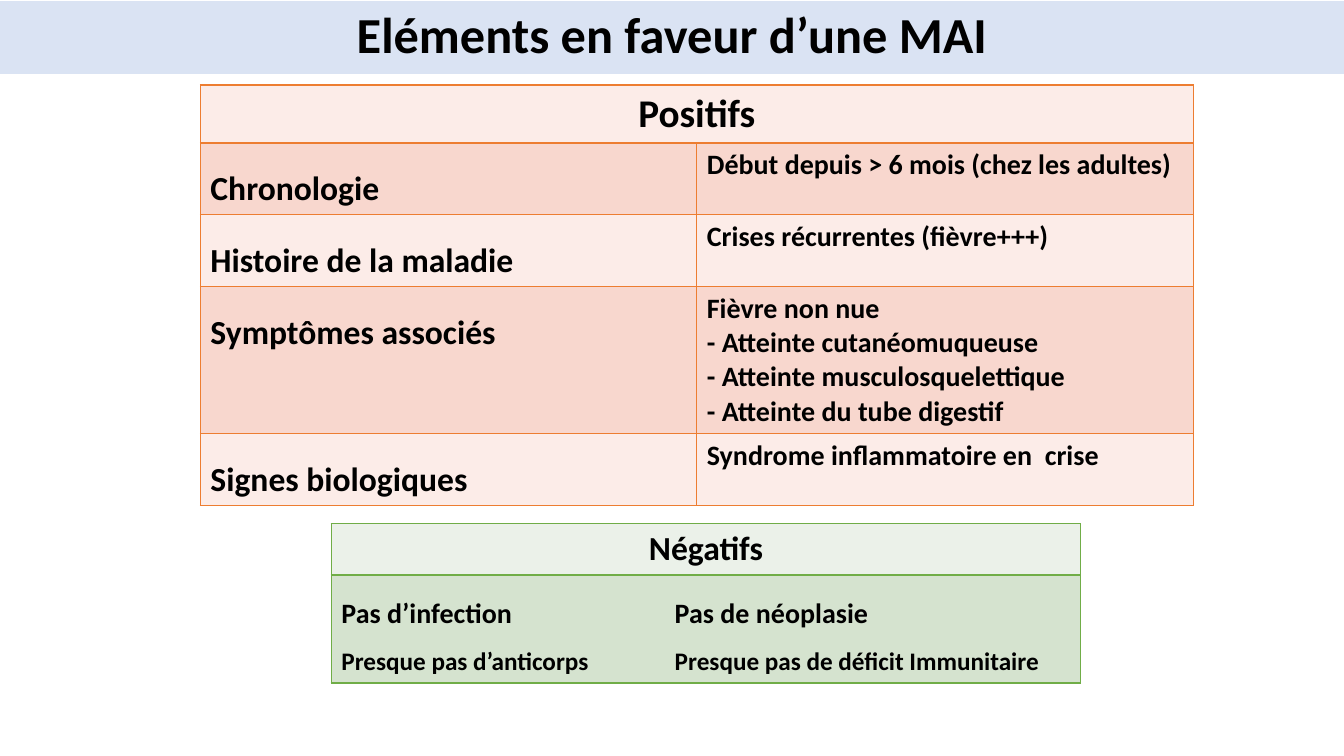
import pptx
import pptx.dml.color
import pptx.enum.text
import pptx.oxml
import pptx.oxml.ns
import pptx.util
from pptx.util import Cm

RGBColor = pptx.dml.color.RGBColor
BLACK = RGBColor(0x00, 0x00, 0x00)
TITLE_BLUE = RGBColor(0xDA, 0xE3, 0xF3)
ORANGE = RGBColor(0xED, 0x7D, 0x31)
ORANGE_BANDS = (RGBColor(0xFC, 0xEC, 0xE8), RGBColor(0xF8, 0xD7, 0xCE))
GREEN = RGBColor(0x70, 0xAD, 0x47)
GREEN_BANDS = (RGBColor(0xEB, 0xF1, 0xE9), RGBColor(0xD5, 0xE3, 0xCF))

CENTER = pptx.enum.text.PP_ALIGN.CENTER
LEFT = pptx.enum.text.PP_ALIGN.LEFT

POSITIVES = [
    ("Chronologie", ["Début depuis > 6 mois (chez les adultes)"]),
    ("Histoire de la maladie", ["Crises récurrentes (fièvre+++)"]),
    ("Symptômes associés", ["Fièvre non nue", "- Atteinte cutanéomuqueuse",
                            "- Atteinte musculosquelettique", "- Atteinte du tube digestif"]),
    ("Signes biologiques", ["Syndrome inflammatoire en  crise"]),
]
NEGATIVES = [
    ("Pas d’infection\tPas de néoplasie", 20),
    ("Presque pas d’anticorps\tPresque pas de déficit Immunitaire", 18),
]


def style_paragraph(para, text, size, align=LEFT, spacing=1.0):
    """Write bold black text into a paragraph."""
    para.text = text
    para.alignment = align
    para.line_spacing = spacing
    font = para.font
    font.name = "Calibri"
    font.size = pptx.util.Pt(size)
    font.bold = True
    font.color.rgb = BLACK


def fill_cell(cell, lines, align=LEFT, spacing=1.0):
    """Write (text, size) lines into a cell, one paragraph each."""
    frame = cell.text_frame
    for index, (text, size) in enumerate(lines):
        para = frame.add_paragraph() if index else frame.paragraphs[0]
        style_paragraph(para, text, size, align, spacing)


def add_tab_stop(para, position):
    """Put a left tab stop in a paragraph, ahead of its default font."""
    stops = pptx.oxml.parse_xml(
        f'<a:tabLst {pptx.oxml.ns.nsdecls("a")}><a:tab pos="{int(position)}" algn="l"/></a:tabLst>')
    properties = para.font._element.getparent()
    properties.insert(properties.index(para.font._element), stops)


def outline_cell(cell, color):
    """Draw a one-point border on every side of a cell."""
    properties = cell._tc.get_or_add_tcPr()
    for side in ("lnL", "lnR", "lnT", "lnB"):
        properties.append(pptx.oxml.parse_xml(
            f'<a:{side} {pptx.oxml.ns.nsdecls("a")} w="12700"><a:solidFill>'
            f'<a:srgbClr val="{color}"/></a:solidFill></a:{side}>'))


def add_banded_table(page, box, heights, columns, line_color, bands):
    """Add a table at box (left, top, width) with alternating row fills."""
    left, top, width = box
    table = page.shapes.add_table(len(heights), columns, left, top, width, sum(heights)).table
    table.first_row = False
    table.horz_banding = False
    for index, height in enumerate(heights):
        table.rows[index].height = height
        for cell in table.rows[index].cells:
            outline_cell(cell, line_color)
            cell.fill.solid()
            cell.fill.fore_color.rgb = bands[index % 2]
    return table


def add_title(page, box):
    """Place the title band in the title placeholder."""
    title = page.shapes.title
    title.left, title.top, title.width, title.height = box
    title.fill.solid()
    title.fill.fore_color.rgb = TITLE_BLUE
    frame = title.text_frame
    frame.auto_size = pptx.enum.text.MSO_AUTO_SIZE.NONE
    frame.vertical_anchor = pptx.enum.text.MSO_ANCHOR.MIDDLE
    style_paragraph(frame.paragraphs[0], "Eléments en faveur d’une MAI", 36, CENTER, 0.9)


def add_positives(page, box):
    """Place the table of findings in favour."""
    heights = [Cm(1.46), Cm(1.81), Cm(1.81), Cm(3.71), Cm(1.81)]
    table = add_banded_table(page, box, heights, 2, ORANGE, ORANGE_BANDS)
    table.cell(0, 0).merge(table.cell(0, 1))
    fill_cell(table.cell(0, 0), [("Positifs", 28)], CENTER)
    for row, (heading, findings) in enumerate(POSITIVES, start=1):
        fill_cell(table.cell(row, 0), [(heading, 24)], spacing=1.5)
        fill_cell(table.cell(row, 1), [(finding, 20) for finding in findings])


def add_negatives(page, box):
    """Place the table of excluded causes, set in two tabbed columns."""
    table = add_banded_table(page, box, [Cm(1.29), Cm(2.72)], 1, GREEN, GREEN_BANDS)
    fill_cell(table.cell(0, 0), [("Négatifs", 24)], CENTER)
    causes = table.cell(1, 0)
    fill_cell(causes, NEGATIVES, spacing=1.5)
    for para in causes.text_frame.paragraphs:
        add_tab_stop(para, Cm(8.4))


def main():
    """Build and save the deck."""
    deck = pptx.Presentation()
    deck.slide_width, deck.slide_height = Cm(33.87), Cm(19.05)
    page = deck.slides.add_slide(deck.slide_layouts.get_by_name("Title Only"))
    add_title(page, (0, Cm(0.03), deck.slide_width, Cm(1.83)))
    add_positives(page, (Cm(5.05), Cm(2.14), Cm(25.02)))
    add_negatives(page, (Cm(8.35), Cm(13.2), Cm(18.88)))
    deck.save("out.pptx")


if __name__ == "__main__":
    main()
